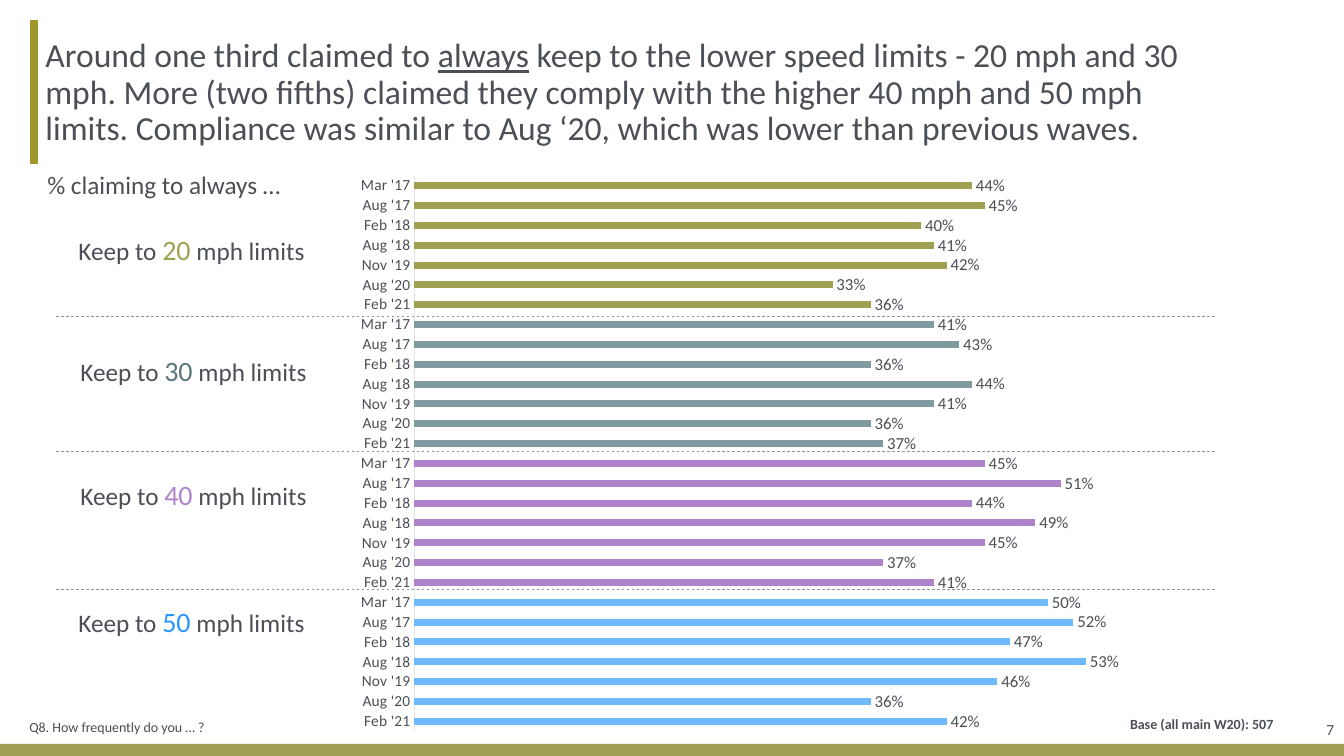
from dataclasses import dataclass

from lxml.etree import SubElement
from pptx import Presentation
from pptx.chart.data import CategoryChartData
from pptx.dml.color import RGBColor
from pptx.enum.chart import XL_CHART_TYPE, XL_LABEL_POSITION, XL_TICK_MARK
from pptx.enum.dml import MSO_LINE
from pptx.enum.shapes import MSO_CONNECTOR, MSO_SHAPE
from pptx.enum.text import MSO_ANCHOR, MSO_AUTO_SIZE, PP_ALIGN
from pptx.oxml import parse_xml
from pptx.oxml.ns import nsdecls, qn
from pptx.util import Inches, Pt


@dataclass(frozen=True)
class Theme:
    font: str = "Calibri"
    ink: str = "4B4F56"
    band: str = "9FA052"
    accent: str = "9F962B"
    divider: str = "8F949D"
    axis: str = "E3E4E7"
    title: int = 24
    label: int = 18
    speed: int = 20
    value: int = 12
    tick: int = 11
    note: int = 10


THEME = Theme()
WAVES = ["Mar '17", "Aug '17", "Feb '18", "Aug '18", "Nov '19", "Aug '20", "Feb '21"]
LIMITS = [
    ("20", "9FA052", "9FA052", 5.1, 30.13, [44, 45, 40, 41, 42, 33, 36]),
    ("30", "5C777B", "7F9B9F", 5.25, 46.13, [41, 43, 36, 44, 41, 36, 37]),
    ("40", "AF82CC", "AF82CC", 5.25, 62.53, [45, 51, 44, 49, 45, 37, 41]),
    ("50", "2896FC", "6FB9FD", 5.1, 79.33, [50, 52, 47, 53, 46, 36, 42]),
]
TITLE = [
    "Around one third claimed to ",
    "always",
    " keep to the lower speed limits - 20 mph and 30 mph. More (two fifths) claimed "
    "they comply with the higher 40 mph and 50 mph limits. Compliance was similar to "
    "Aug ‘20, which was lower than previous waves.",
]


class SlideBuilder:
    def __init__(self, prs, theme):
        self.theme = theme
        self.col = prs.slide_width / 100
        self.row = prs.slide_height / 100
        self.s = prs.slides.add_slide(prs.slide_layouts[5])

    def box(self, x, y, w, h):
        return (int(x * self.col), int(y * self.row),
                int(w * self.col), int(h * self.row))

    def style(self, font, size, color=None, bold=False):
        font.name = self.theme.font
        font.size = Pt(size)
        font.bold = bold
        font.color.rgb = RGBColor.from_string(color or self.theme.ink)

    def rect(self, area, color):
        sp = self.s.shapes.add_shape(MSO_SHAPE.RECTANGLE, *self.box(*area))
        sp.shadow.inherit = False
        sp.fill.solid()
        sp.fill.fore_color.rgb = RGBColor.from_string(color)
        sp.line.fill.background()

    def line(self, x1, y1, x2, y2, color, width, dash=None):
        start = self.box(x1, y1, 0, 0)[:2]
        end = self.box(x2, y2, 0, 0)[:2]
        sp = self.s.shapes.add_connector(MSO_CONNECTOR.STRAIGHT, *start, *end)
        sp.line.color.rgb = RGBColor.from_string(color)
        sp.line.width = Pt(width)
        if dash:
            sp.line.dash_style = dash
        SubElement(sp._element.spPr, qn("a:effectLst"))

    def inset(self, tf):
        tf.margin_left = Inches(0.08)
        tf.margin_top = tf.margin_right = tf.margin_bottom = 0

    def title(self, area, parts):
        sp = self.s.shapes.title
        sp.left, sp.top, sp.width, sp.height = self.box(*area)
        tf = sp.text_frame
        tf.auto_size = MSO_AUTO_SIZE.NONE
        tf.vertical_anchor = MSO_ANCHOR.MIDDLE
        self.inset(tf)
        p = tf.paragraphs[0]
        p.alignment = PP_ALIGN.LEFT
        p.line_spacing = 0.9
        for i, part in enumerate(parts):
            r = p.add_run()
            r.text = part
            self.style(r.font, self.theme.title)
            r.font.underline = i == 1

    def note(self, area, text, size, align=PP_ALIGN.LEFT, bold=False, flush=True):
        sp = self.s.shapes.add_textbox(*self.box(*area))
        tf = sp.text_frame
        tf.word_wrap = True
        tf.vertical_anchor = MSO_ANCHOR.MIDDLE
        if flush:
            self.inset(tf)
        tf.text = text
        p = tf.paragraphs[0]
        p.alignment = align
        self.style(p.runs[0].font, size, bold=bold)

    def label(self, area, parts):
        sp = self.s.shapes.add_textbox(*self.box(*area))
        tf = sp.text_frame
        tf.word_wrap = False
        tf.auto_size = MSO_AUTO_SIZE.SHAPE_TO_FIT_TEXT
        p = tf.paragraphs[0]
        for text, size, color in parts:
            r = p.add_run()
            r.text = text
            self.style(r.font, size, color)

    def bar_chart(self, area, waves, limits, plot):
        data = CategoryChartData(number_format="0%")
        data.categories = waves * len(limits)
        data.add_series("Series 1", [v / 100 for *_, values in limits for v in values])
        chart = self.s.shapes.add_chart(
            XL_CHART_TYPE.BAR_CLUSTERED, *self.box(*area), data).chart
        chart.has_legend = False
        chart.has_title = False
        self.style(chart.font, self.theme.value)

        cat = chart.category_axis
        cat.reverse_order = True
        cat.major_tick_mark = cat.minor_tick_mark = XL_TICK_MARK.NONE
        cat.has_major_gridlines = False
        cat.format.line.color.rgb = RGBColor.from_string(self.theme.axis)
        cat.format.line.width = Pt(0.75)
        self.style(cat.tick_labels.font, self.theme.tick)

        val = chart.value_axis
        val.minimum_scale, val.maximum_scale = 0, 0.6
        val.has_major_gridlines = False
        val.visible = False

        bars = chart.plots[0]
        bars.gap_width = 182
        bars.vary_by_categories = False
        bars.has_data_labels = True
        labels = bars.data_labels
        labels.show_value = True
        labels.position = XL_LABEL_POSITION.OUTSIDE_END
        labels.number_format = "0%"
        labels.number_format_is_linked = False
        self.style(labels.font, self.theme.value)

        series = bars.series[0]
        series.invert_if_negative = False
        series.format.fill.solid()
        series.format.fill.fore_color.rgb = RGBColor.from_string(limits[0][2])
        for i in range(len(waves), len(waves) * len(limits)):
            fill = series.points[i].format.fill
            fill.solid()
            fill.fore_color.rgb = RGBColor.from_string(limits[i // len(waves)][2])
        self.place_plot(chart, plot)

    def place_plot(self, chart, plot):
        area = chart._chartSpace.find(".//" + qn("c:plotArea"))
        for old in area.findall(qn("c:layout")):
            area.remove(old)
        modes = '<c:xMode val="edge"/><c:yMode val="edge"/>'
        sizes = "".join(f'<c:{k} val="{v}"/>' for k, v in zip("xywh", plot))
        area.insert(0, parse_xml(
            f'<c:layout {nsdecls("c")}><c:manualLayout><c:layoutTarget val="inner"/>'
            f"{modes}{sizes}</c:manualLayout></c:layout>"))


def main():
    prs = Presentation()
    prs.slide_width, prs.slide_height = Inches(13.33), Inches(7.5)
    b = SlideBuilder(prs, THEME)
    b.rect((0, 98.4, 100, 1.6), THEME.band)
    b.line(2.55, 2.67, 2.55, 21.73, THEME.accent, 6)
    b.title((2.78, 2.93, 87.4, 18.8), TITLE)
    b.note((93.1, 93.2, 6.9, 6.67), "7", THEME.tick, PP_ALIGN.RIGHT, flush=False)
    b.note((1.58, 94.13, 72.3, 4.13), "Q8. How frequently do you … ?", THEME.note)
    b.note((65.94, 93.6, 28.8, 4.27), "Base (all main W20): 507", THEME.note,
           PP_ALIGN.RIGHT, bold=True)
    for y in (41.87, 59.73, 78):
        b.line(4.2, y, 90.47, y, THEME.divider, 0.5, MSO_LINE.DASH)
    b.label((2.78, 21.73, 19.2, 5.33),
            [("% claiming to always …", THEME.label, THEME.ink)])
    for speed, color, _, x, y, _ in LIMITS:
        b.label((x, y, 18.53, 5.87), [("Keep to ", THEME.label, THEME.ink),
                                      (speed, THEME.speed, color),
                                      (" mph limits", THEME.label, THEME.ink)])
    b.bar_chart((25.8, 21.73, 62.87, 76.53), WAVES, LIMITS, (0.08, 0.02, 0.9, 0.96))
    prs.save("out.pptx")


if __name__ == "__main__":
    main()
